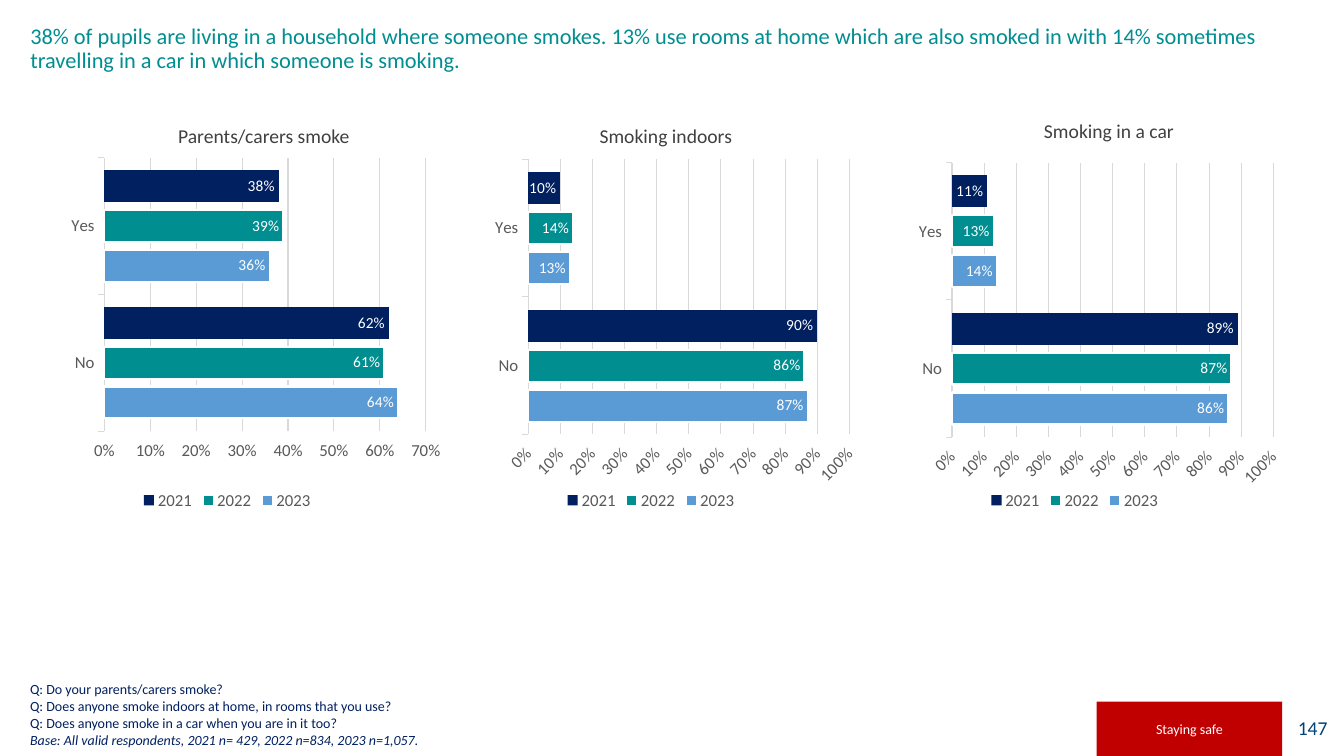
from lxml import etree
from pptx import Presentation
from pptx.chart.data import CategoryChartData
from pptx.dml.color import RGBColor
from pptx.enum.chart import XL_CHART_TYPE, XL_LABEL_POSITION, XL_LEGEND_POSITION, XL_TICK_MARK
from pptx.enum.shapes import MSO_SHAPE
from pptx.enum.text import MSO_ANCHOR, MSO_AUTO_SIZE, PP_ALIGN
from pptx.oxml.ns import qn
from pptx.util import Cm, Pt

BAR = XL_CHART_TYPE.BAR_CLUSTERED
INSIDE_END = XL_LABEL_POSITION.INSIDE_END
LEGEND_BOTTOM = XL_LEGEND_POSITION.BOTTOM
TICK_OUT = XL_TICK_MARK.OUTSIDE
RECT = MSO_SHAPE.RECTANGLE
TOP, MIDDLE, BOTTOM = MSO_ANCHOR.TOP, MSO_ANCHOR.MIDDLE, MSO_ANCHOR.BOTTOM
LEFT, CENTER, RIGHT = PP_ALIGN.LEFT, PP_ALIGN.CENTER, PP_ALIGN.RIGHT
NO_FIT = MSO_AUTO_SIZE.NONE

NAVY, TEAL, BLUE, WHITE = "002060", "008E91", "5B9BD5", "FFFFFF"
GREY, PALE, DARK, RED, PAGE_BLUE = "595959", "D9D9D9", "404040", "C00000", "004376"
YEARS = [("2023", BLUE), ("2022", TEAL), ("2021", NAVY)]


def rgb(hex_color):
    return RGBColor.from_string(hex_color)


class SlideBuilder:
    font = "Calibri"

    def __init__(self, prs):
        self.s = prs.slides.add_slide(prs.slide_layouts[5])

    def style(self, font, size, color):
        font.name, font.size = self.font, Pt(size)
        font.color.rgb = rgb(color)

    def fill_text(self, sp, lines, size, color, align=LEFT, anchor=TOP, spacing=None):
        """Fill a shape with (text, italic) lines, one paragraph each."""
        tf = sp.text_frame
        tf.word_wrap, tf.auto_size, tf.vertical_anchor = True, NO_FIT, anchor
        for i, (text, italic) in enumerate(lines):
            p = tf.add_paragraph() if i else tf.paragraphs[0]
            p.alignment = align
            if spacing:
                p.line_spacing = spacing
            r = p.add_run()
            r.text = text
            self.style(r.font, size, color)
            if italic:
                r.font.italic = True

    def title(self, text, box, size, color):
        sp = self.s.shapes.title
        sp.left, sp.top, sp.width, sp.height = map(Cm, box)
        self.fill_text(sp, [(text, False)], size, color, spacing=0.9)

    def text(self, lines, box, size, color, anchor=TOP):
        sp = self.s.shapes.add_textbox(*map(Cm, box))
        self.fill_text(sp, lines, size, color, anchor=anchor)

    def block(self, text, box, fill, size, color, align):
        sp = self.s.shapes.add_shape(RECT, *map(Cm, box))
        sp.shadow.inherit = False
        sp.fill.solid()
        sp.fill.fore_color.rgb = rgb(fill)
        sp.line.fill.background()
        self.fill_text(sp, [(text, False)], size, color, align, MIDDLE)

    def bar_chart(self, values, box, axis_max, plot_height):
        data = CategoryChartData(number_format="0%")
        data.categories = ["No", "Yes"]
        for (year, _), vals in zip(YEARS, values):
            data.add_series(year, vals)
        chart = self.s.shapes.add_chart(BAR, *map(Cm, box), data).chart
        self.style(chart.font, 10, "000000")
        chart.has_title = False
        chart.has_legend = True
        chart.legend.position = LEGEND_BOTTOM
        chart.legend.include_in_layout = False
        self.style(chart.legend.font, 12, GREY)

        plot = chart.plots[0]
        plot.gap_width, plot.overlap, plot.vary_by_categories = 80, -25, False
        for series, (_, color) in zip(plot.series, YEARS):
            self.bars(series, color)
        self.axes(chart, axis_max)
        self.place_plot(chart, 0.22, 0.026, 0.733, plot_height)

    def bars(self, series, color):
        series.invert_if_negative = False
        series.format.fill.solid()
        series.format.fill.fore_color.rgb = rgb(color)
        line = series.format.line
        if color == NAVY:
            line.fill.background()
        else:
            line.color.rgb = rgb(WHITE)
            line.width = Pt(1.5)
        labels = series.data_labels
        labels.show_value = True
        labels.position = INSIDE_END
        labels.number_format, labels.number_format_is_linked = "0%", False
        self.style(labels.font, 11, WHITE)

    def axes(self, chart, axis_max):
        cat, val = chart.category_axis, chart.value_axis
        for axis in (cat, val):
            axis.major_tick_mark = TICK_OUT
            self.style(axis.tick_labels.font, 12, GREY)
        val.minimum_scale, val.maximum_scale, val.major_unit = 0, axis_max, 0.1
        val.tick_labels.number_format = "0%"
        val.tick_labels.number_format_is_linked = False
        val.format.line.fill.background()
        val.has_major_gridlines = True
        for line in (cat.format.line, val.major_gridlines.format.line):
            line.color.rgb = rgb(PALE)
            line.width = Pt(0.75)

    def place_plot(self, chart, *box):
        """Fix the inner plot area as fractions of the chart."""
        area = chart.element.find(".//" + qn("c:plotArea"))
        for old in area.findall(qn("c:layout")):
            area.remove(old)
        layout = etree.Element(qn("c:layout"))
        area.insert(0, layout)
        manual = etree.SubElement(layout, qn("c:manualLayout"))
        items = [("layoutTarget", "inner"), ("xMode", "edge"), ("yMode", "edge")]
        for tag, value in items + list(zip("xywh", box)):
            etree.SubElement(manual, qn("c:" + tag)).set("val", str(value))


def main():
    prs = Presentation()
    prs.slide_width, prs.slide_height = Cm(33.87), Cm(19.05)
    b = SlideBuilder(prs)
    b.block("147", (32.21, 17.65, 1.5, 1.37), WHITE, 14, PAGE_BLUE, RIGHT)
    b.title("38% of pupils are living in a household where someone smokes. "
            "13% use rooms at home which are also smoked in with 14% sometimes "
            "travelling in a car in which someone is smoking.",
            (0.51, 0.51, 32.66, 2.49), 16, TEAL)
    b.text([("Q: Do your parents/carers smoke?", False),
            ("Q: Does anyone smoke indoors at home, in rooms that you use?", False),
            ("Q: Does anyone smoke in a car when you are in it too?", False),
            ("Base: All valid respondents, 2021 n= 429, 2022 n=834, 2023 n=1,057.", True)],
           (0.51, 17.02, 28.42, 1.96), 10, NAVY, BOTTOM)
    b.block("Staying safe", (27.64, 17.68, 4.67, 1.37), RED, 10, WHITE, CENTER)

    # heading, its left and top, chart top, axis maximum, plot height, (No, Yes) per year
    panels = [
        ("Parents/carers smoke", 4.24, 3, 3.73, 0.7, 0.747,
         [(0.64, 0.36), (0.61, 0.39), (0.62, 0.38)]),
        ("Smoking indoors", 14.86, 3, 3.78, 1, 0.755,
         [(0.87, 0.13), (0.86, 0.14), (0.9, 0.1)]),
        ("Smoking in a car", 26.06, 2.87, 3.86, 1, 0.761,
         [(0.86, 0.14), (0.87, 0.13), (0.89, 0.11)]),
    ]
    chart_bottom = 12.96
    for i, (heading, left, top, chart_top, axis_max, plot_height, values) in enumerate(panels):
        box = (0.2 + 10.68 * i, chart_top, 11.05, chart_bottom - chart_top)
        b.bar_chart(values, box, axis_max, plot_height)
        b.text([(heading, False)], (left, top, 5.05, 0.86), 14, DARK)
    prs.save("out.pptx")


if __name__ == "__main__":
    main()
